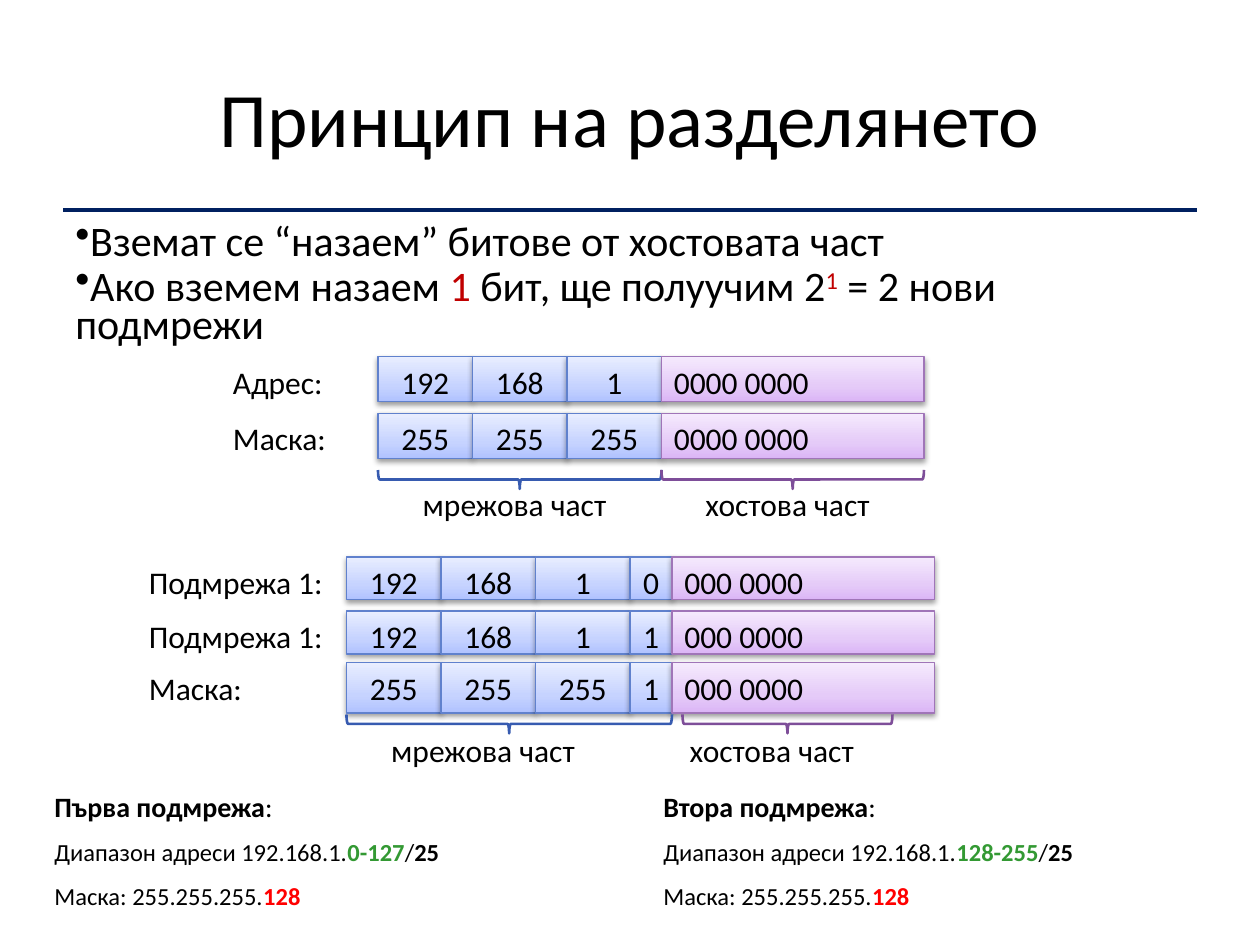
from pptx import Presentation
from pptx.dml.color import RGBColor
from pptx.enum.shapes import MSO_CONNECTOR, MSO_SHAPE
from pptx.enum.text import MSO_ANCHOR, PP_ALIGN
from pptx.oxml import parse_xml
from pptx.oxml.ns import nsdecls
from pptx.util import Inches, Pt

RECT, BRACE = MSO_SHAPE.RECTANGLE, MSO_SHAPE.LEFT_BRACE
STRAIGHT = MSO_CONNECTOR.STRAIGHT
LEFT, CENTER = PP_ALIGN.LEFT, PP_ALIGN.CENTER
TOP, MIDDLE = MSO_ANCHOR.TOP, MSO_ANCHOR.MIDDLE

WIDTH, HEIGHT = Inches(10), Inches(7.5)
COL, ROW = WIDTH / 120, HEIGHT / 75
FONT = "Calibri"
COLORS = {"text": "000000", "rule": "002060", "borrowed": "C00000",
          "range": "339933", "mask": "FF0000"}
# Each address part: gradient from bottom to top, cell outline, brace
PARTS = {
    "net": {"stops": ("B0C2FF", "C6D3FF", "E9EEFF"),
            "line": "6081CD", "brace": "375BB0"},
    "host": {"stops": ("DBB5F6", "E5CBF8", "F5EAFD"),
             "line": "A075B8", "brace": "7E4E99"},
}
STOP_POSITIONS = (0, 35000, 100000)
BRACE_ROWS = 1.5
BOLD = {"bold": True}
RED_BIT = {"color": "borrowed"}


def grid(left, top, width, height):
    """Turn columns and rows into lengths."""
    return [round(v) for v in (left * COL, top * ROW, width * COL, height * ROW)]


def write(sp, paragraphs, size=18, align=LEFT, anchor=TOP, **spacing):
    """Fill a shape with paragraphs, each a list of (text, format) runs."""
    tf = sp.text_frame
    tf.word_wrap = True
    tf.vertical_anchor = anchor
    for i, runs in enumerate(paragraphs):
        p = tf.paragraphs[0] if i == 0 else tf.add_paragraph()
        p.alignment = align
        for name, value in spacing.items():
            setattr(p, name, value)
        for text, extra in runs:
            r = p.add_run()
            r.text = text
            values = {"name": FONT, "size": Pt(size), **extra}
            color = COLORS[values.pop("color", "text")]
            baseline = values.pop("baseline", None)
            for name, value in values.items():
                setattr(r.font, name, value)
            r.font.color.rgb = RGBColor.from_string(color)
            if baseline:
                r.font._element.set("baseline", str(baseline))


def add_text(slide, box, paragraphs, **options):
    sp = slide.shapes.add_textbox(*grid(*box))
    write(sp, paragraphs, **options)
    return sp


def add_cell(slide, box, text, part):
    sp = slide.shapes.add_shape(RECT, *grid(*box))
    look = PARTS[part]
    sp.line.color.rgb = RGBColor.from_string(look["line"])
    sp.line.width = Pt(0.75)
    stops = "".join(
        f'<a:gs pos="{pos}"><a:srgbClr val="{color}"/></a:gs>'
        for pos, color in zip(STOP_POSITIONS, look["stops"]))
    gradient = parse_xml(
        f'<a:gradFill {nsdecls("a")} rotWithShape="1"><a:gsLst>{stops}</a:gsLst>'
        '<a:lin ang="16200000" scaled="0"/></a:gradFill>')
    shadow = parse_xml(
        f'<a:effectLst {nsdecls("a")}>'
        '<a:outerShdw blurRad="40000" dist="20000" dir="5400000" rotWithShape="0">'
        '<a:srgbClr val="000000"><a:alpha val="38000"/></a:srgbClr>'
        '</a:outerShdw></a:effectLst>')
    properties = sp._element.spPr
    properties.find("{*}prstGeom").addnext(gradient)
    properties.append(shadow)
    write(sp, [[(text, {})]], align=CENTER if part == "net" else LEFT)


def add_brace(slide, left, top, width, part):
    """Place a brace that points down, spanning the given columns."""
    x, y, w, h = grid(left, top, width, BRACE_ROWS)
    sp = slide.shapes.add_shape(BRACE, x + (w - h) // 2, y + (h - w) // 2, h, w)
    sp.rotation = 270
    sp.shadow.inherit = False
    sp.fill.background()
    sp.line.color.rgb = RGBColor.from_string(PARTS[part]["brace"])
    sp.line.width = Pt(1.5)


def add_heading(slide, box):
    left, top, width, height = box
    add_text(slide, box, [[("Принцип на разделянето", {})]],
             size=44, align=CENTER, anchor=MIDDLE)
    x, y, w, _ = grid(left, top + height + 1.2, width, 0)
    rule = slide.shapes.add_connector(STRAIGHT, x, y, x + w, y)
    rule.line.color.rgb = RGBColor.from_string(COLORS["rule"])
    rule.line.width = Pt(2.25)
    rule._element.spPr.append(parse_xml(f'<a:effectLst {nsdecls("a")}/>'))


def add_bullets(slide, box):
    sp = add_text(slide, box, [
        [("Вземат се “назаем” битове от хостовата част", {})],
        [("Ако вземем назаем ", {}), ("1", RED_BIT),
         (" бит, ще полуучим 2", {}), ("1", {**RED_BIT, "baseline": 30000}),
         (" = 2 нови подмрежи", {})],
    ], size=24, line_spacing=0.75, space_before=Pt(4))
    for p in sp.text_frame.paragraphs:
        p._p.get_or_add_pPr().append(
            parse_xml(f'<a:buChar {nsdecls("a")} char="•"/>'))


def add_address_diagram(slide, left, top, label_width, widths, rows,
                        brace_top, caption_top, braces, captions):
    """Draw labelled address rows, then braces and captions below them.

    Row tops and the brace and caption tops count from the top of the diagram,
    brace and caption columns from its first cell.
    """
    first = left + label_width
    for offset, height, label, values in rows:
        y = top + offset
        add_text(slide, (left, y, label_width, height), [[(label, {})]])
        x = first
        for i, (value, width) in enumerate(zip(values, widths)):
            part = "host" if i == len(widths) - 1 else "net"
            add_cell(slide, (x, y, width, height), value, part)
            x += width
    for part, (start, width) in braces.items():
        add_brace(slide, first + start, top + brace_top, width, part)
    for text, start, width in captions:
        add_text(slide, (first + start, top + caption_top, width, 3.5),
                 [[(text, {})]], align=CENTER)


def add_subnet_summary(slide, box, name, addresses):
    small = {"size": Pt(14)}
    strong = {**small, **BOLD}
    add_text(slide, box, [
        [(name, BOLD), (":", {})],
        [("Диапазон адреси 192.168.1.", small),
         (addresses, {**strong, "color": "range"}), ("/", small), ("25", strong)],
        [("Маска: 255.255.255.", small), ("128", {**strong, "color": "mask"})],
    ], size=16, line_spacing=1.5)


def main():
    prs = Presentation()
    prs.slide_width, prs.slide_height = WIDTH, HEIGHT
    slide = prs.slides.add_slide(prs.slide_layouts[6])

    add_heading(slide, (6, 3, 108, 12.5))
    add_bullets(slide, (6, 17.5, 108, 12.5))

    address, mask = ["192", "168", "1"], ["255"] * 3
    add_address_diagram(
        slide, 21, 28.3, 15, (9, 9, 9, 25),
        [(0, 3.6, "Адрес:", address + ["0000 0000"]),
         (4.5, 3.6, "Маска:", mask + ["0000 0000"])],
        brace_top=9, caption_top=9.7,
        braces={"net": (0, 27), "host": (27, 25)},
        captions=[("мрежова част", 1, 24), ("хостова част", 28, 22)])
    add_address_diagram(
        slide, 13, 44.2, 20, (9, 9, 9, 4, 25),
        [(0, 3.4, "Подмрежа 1:", address + ["0", "000 0000"]),
         (4.3, 3.4, "Подмрежа 1:", address + ["1", "000 0000"]),
         (8.4, 4, "Маска:", mask + ["1", "000 0000"])],
        brace_top=12.5, caption_top=13.3,
        braces={"net": (0, 31), "host": (32, 20)},
        captions=[("мрежова част", 1, 24), ("хостова част", 31, 19)])

    add_subnet_summary(slide, (4, 60.8, 41, 12.1), "Първа подмрежа", "0-127")
    add_subnet_summary(slide, (62, 60.8, 53, 12.1), "Втора подмрежа", "128-255")

    prs.save("out.pptx")


if __name__ == "__main__":
    main()
